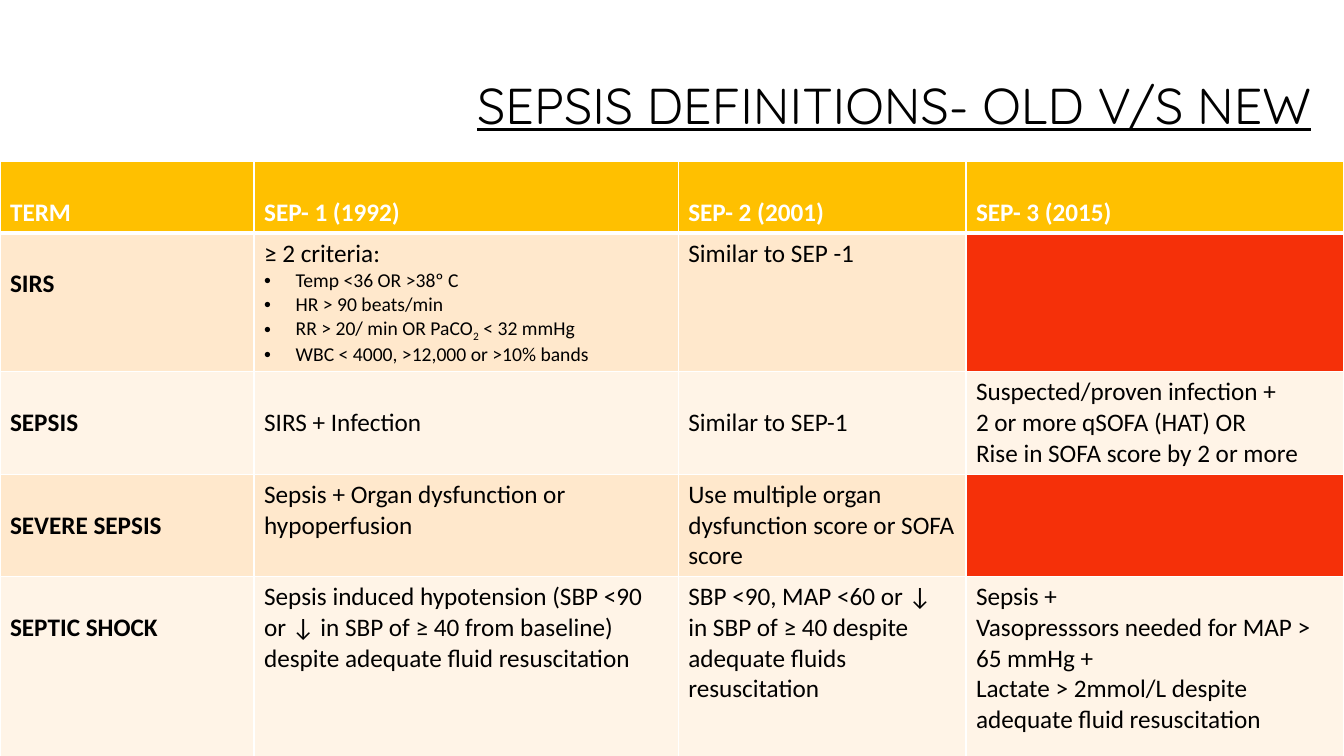
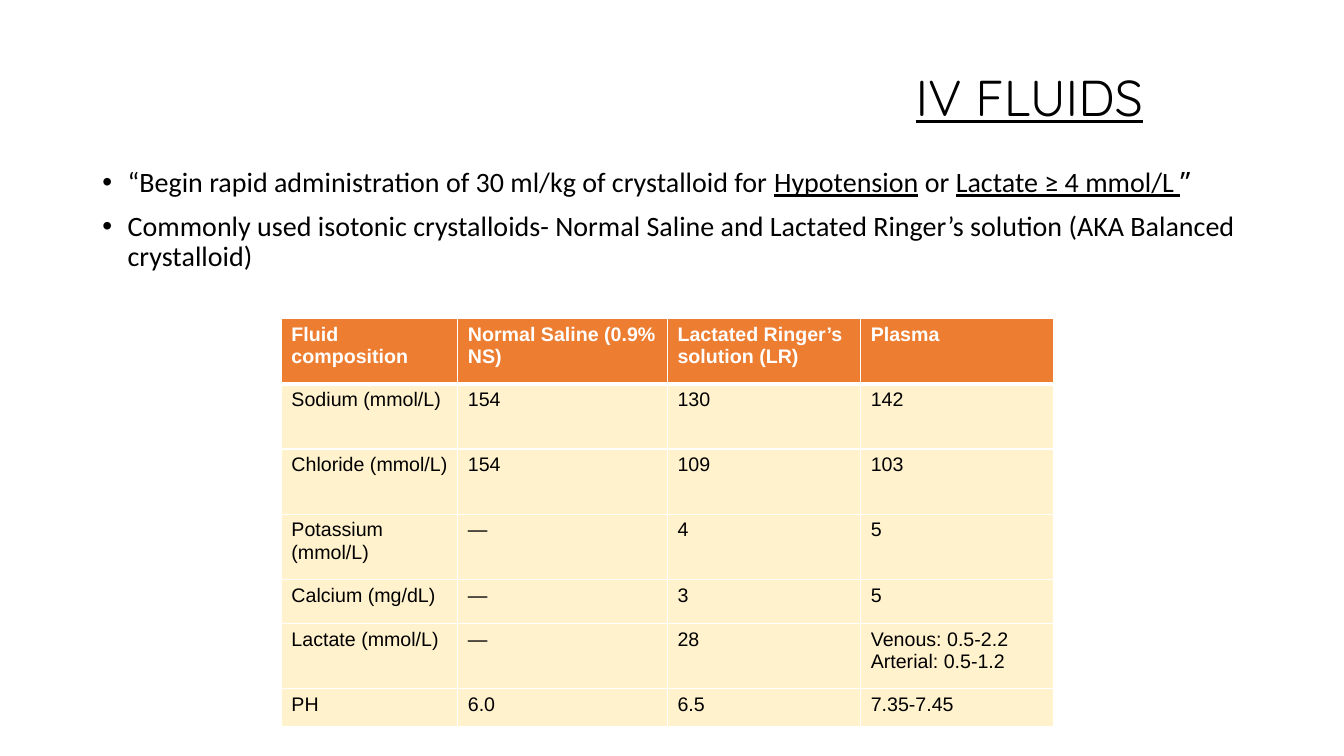
from lxml.etree import SubElement
from pptx import Presentation
from pptx.dml.color import RGBColor
from pptx.enum.text import MSO_ANCHOR, MSO_AUTO_SIZE, PP_ALIGN
from pptx.oxml.ns import qn
from pptx.util import Pt

MIDDLE = MSO_ANCHOR.MIDDLE
TOP = MSO_ANCHOR.TOP
NOFIT = MSO_AUTO_SIZE.NONE
RIGHT = PP_ALIGN.RIGHT

BLACK = RGBColor(0x00, 0x00, 0x00)
WHITE = RGBColor(0xFF, 0xFF, 0xFF)
GOLD = RGBColor(0xFF, 0xC0, 0x00)
PEACH = RGBColor(0xFF, 0xE8, 0xCC)
CREAM = RGBColor(0xFF, 0xF4, 0xE7)
RED = RGBColor(0xF5, 0x30, 0x09)
ORANGE = RGBColor(0xED, 0x7D, 0x31)
SAND = RGBColor(0xFF, 0xF2, 0xCC)


def indent(para, size):
    props = para._p.get_or_add_pPr()
    props.set("marL", str(Pt(size)))
    props.set("indent", str(-Pt(size)))
    SubElement(props, qn("a:buFont")).set("typeface", "Arial")
    SubElement(props, qn("a:buChar")).set("char", "•")


def grid(slide, left, top, widths, heights, rows, face, size, fills):
    frame = slide.shapes.add_table(
        len(rows), len(widths), Pt(left), Pt(top), Pt(sum(widths)), Pt(sum(heights)))
    table = frame.table
    for col, width in zip(table.columns, widths):
        col.width = Pt(width)
    for row, height in zip(table.rows, heights):
        row.height = Pt(height)
    for r, row in enumerate(rows):
        for c, text in enumerate(row):
            cell = table.cell(r, c)
            props = cell._tc.get_or_add_tcPr()
            for side in "LRTB":
                thick = (r, side) in ((0, "B"), (1, "T"))
                line = SubElement(props, qn("a:ln" + side), w=str(Pt(3 if thick else 1)))
                paint = SubElement(line, qn("a:solidFill"))
                SubElement(paint, qn("a:srgbClr"), val=str(WHITE))
            cell.fill.solid()
            cell.fill.fore_color.rgb = fills[r] if text else RED
            cell.text_frame.text = text
            for para in cell.text_frame.paragraphs:
                for run in para.runs:
                    run.font.name = face
                    run.font.size = Pt(size)
                    run.font.bold = r == 0
                    run.font.color.rgb = BLACK if r else WHITE
    return table


deck = Presentation()
deck.slide_width = Pt(960)
deck.slide_height = Pt(540)

slides = []
for layout, words, left, top, width in (
    (5, "SEPSIS DEFINITIONS- OLD V/S NEW", 265.7, 26.6, 678.2),
    (1, "IV FLUIDS", 532, 20.9, 291.6),
):
    slide = deck.slides.add_slide(deck.slide_layouts[layout])
    title = slide.shapes.title
    title.left, title.top, title.width, title.height = Pt(left), Pt(top), Pt(width), Pt(101.5)
    frame = title.text_frame
    frame.text = words
    frame.auto_size = NOFIT
    frame.vertical_anchor = MIDDLE
    para = frame.paragraphs[0]
    para.alignment = RIGHT
    para.line_spacing = 0.9
    font = para.runs[0].font
    font.name = "Quicksand"
    font.size = Pt(36)
    font.underline = True
    font.color.rgb = BLACK
    slides.append(slide)

terms = [
    ["TERM", "SEP- 1 (1992)", "SEP- 2 (2001)", "SEP- 3 (2015)"],
    ["SIRS", "≥ 2 criteria:", "Similar to SEP -1", ""],
    ["SEPSIS", "SIRS + Infection", "Similar to SEP-1",
     "Suspected/proven infection +\n2 or more qSOFA (HAT) OR\nRise in SOFA score by 2 or more"],
    ["SEVERE SEPSIS", "Sepsis + Organ dysfunction or hypoperfusion",
     "Use multiple organ dysfunction score or SOFA score", ""],
    ["SEPTIC SHOCK",
     "Sepsis induced hypotension (SBP <90 or ↓ in SBP of ≥ 40 from baseline) "
     "despite adequate fluid resuscitation",
     "SBP <90, MAP <60 or ↓ in SBP of ≥ 40 despite adequate fluids resuscitation",
     "Sepsis +\nVasopresssors needed for MAP > 65 mmHg +\n"
     "Lactate > 2mmol/L despite adequate fluid resuscitation"],
]
table = grid(slides[0], 0, 115.2, [181.5, 303, 205.5, 270], [47.5, 91.5, 68.5, 68.5, 135.5],
             terms, "Calibri", 18, [GOLD, PEACH, CREAM, PEACH, CREAM])
for r, row in enumerate(terms):
    for c, text in enumerate(row):
        if r == 0 or c == 0 or (r == 2 and c < 3):
            table.cell(r, c).margin_top = Pt(25.6)
    table.cell(r, 0).text_frame.paragraphs[0].runs[0].font.bold = True

signs = [
    ["Temp <36 OR >38º C"],
    ["HR > 90 beats/min"],
    ["RR > 20/ min OR PaCO", "2", " < 32 mmHg"],
    ["WBC < 4000, >12,000 or >10% bands"],
]
for parts in signs:
    para = table.cell(1, 1).text_frame.add_paragraph()
    indent(para, 22.5)
    for text in parts:
        run = para.add_run()
        run.text = text
        run.font.name = "Calibri"
        run.font.size = Pt(14)
        run.font.color.rgb = BLACK
        if text == "2":
            run.font._element.set("baseline", "-25000")

body = slides[1].placeholders[1]
body.left, body.top, body.width, body.height = Pt(66), Pt(116.6), Pt(828), Pt(342.7)
frame = body.text_frame
frame.auto_size = NOFIT
frame.vertical_anchor = TOP
points = [
    ["“Begin rapid administration of 30 ml/kg of crystalloid for ", "Hypotension",
     " or ", "Lactate ≥ 4 mmol/L ", "ʺ"],
    ["Commonly used isotonic crystalloids- Normal Saline and Lactated Ringer’s solution "
     "(AKA Balanced crystalloid)"],
]
for i, parts in enumerate(points):
    para = frame.add_paragraph() if i else frame.paragraphs[0]
    indent(para, 18)
    para.line_spacing = 0.9
    para.space_before = Pt(10 if i else 0)
    for n, text in enumerate(parts):
        run = para.add_run()
        run.text = text
        run.font.name = "Calibri"
        run.font.size = Pt(20)
        run.font.underline = n % 2 == 1
        run.font.color.rgb = BLACK

fluids = [
    ["Fluid composition", "Normal Saline (0.9% NS)", "Lactated Ringer’s solution (LR)", "Plasma"],
    ["Sodium (mmol/L)", "154", "130", "142"],
    ["Chloride (mmol/L)", "154", "109", "103"],
    ["Potassium (mmol/L)", "―", "4", "5"],
    ["Calcium (mg/dL)", "―", "3", "5"],
    ["Lactate (mmol/L)", "―", "28", "Venous: 0.5-2.2\nArterial: 0.5-1.2"],
    ["PH", "6.0", "6.5", "7.35-7.45"],
]
grid(slides[1], 201, 227.5, [126, 149.8, 138, 138], [46.6] * 4 + [31.5, 46.6, 27.3],
     fluids, "Arial", 14, [ORANGE] + [SAND] * 6)

deck.save("out.pptx")
